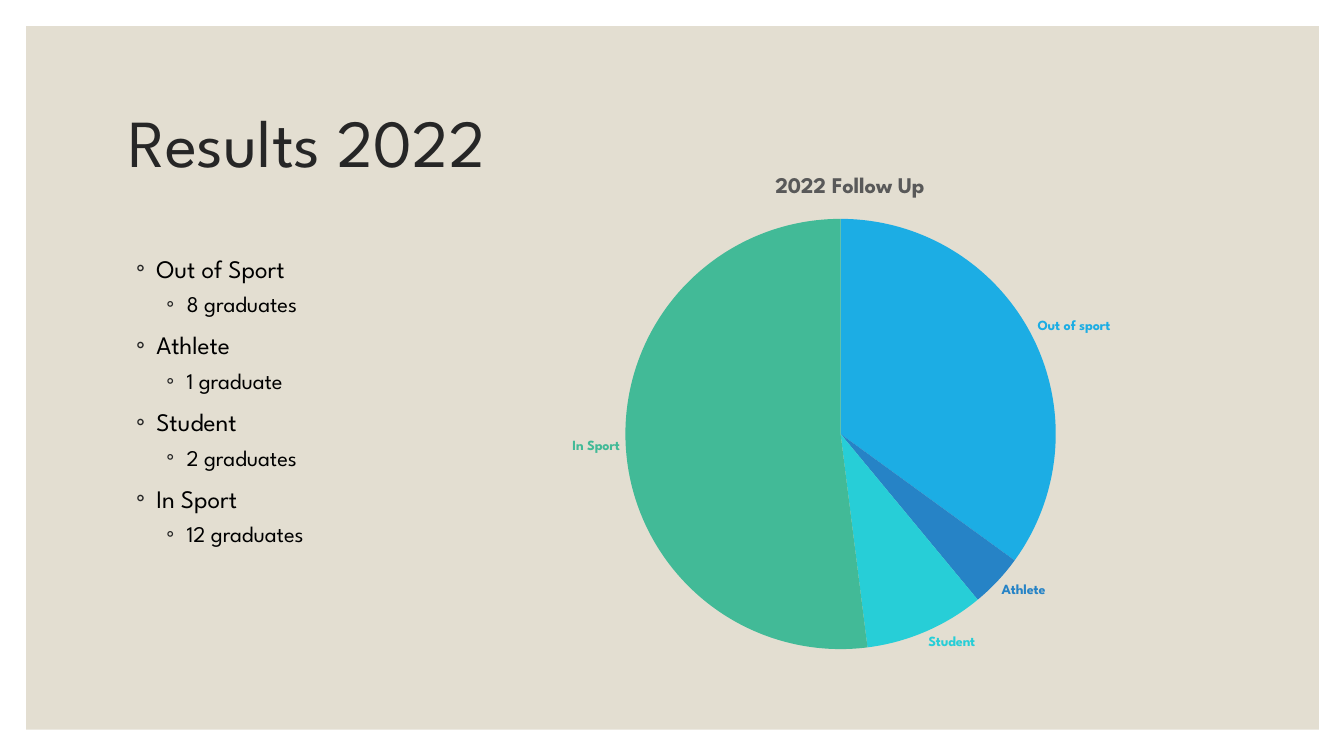
from lxml.etree import SubElement
from pptx import Presentation
from pptx.chart.data import CategoryChartData
from pptx.dml.color import RGBColor
from pptx.enum.chart import XL_CHART_TYPE, XL_LABEL_POSITION
from pptx.enum.shapes import MSO_SHAPE
from pptx.enum.text import MSO_ANCHOR, MSO_AUTO_SIZE, PP_ALIGN
from pptx.oxml.ns import qn
from pptx.util import Pt

FONT = "League Spartan"


def px(n):
    return n * 9144


def style(font, color, **values):
    font.color.rgb = RGBColor.from_string(color)
    for name, value in {"name": FONT, **values}.items():
        setattr(font, name, value)


prs = Presentation()
prs.slide_width, prs.slide_height = px(1333), px(750)
s = prs.slides.add_slide(prs.slide_layouts[1])
title, body = s.placeholders

panel = s.shapes.add_shape(MSO_SHAPE.RECTANGLE, px(26), px(26), px(1282), px(698))
panel.shadow.inherit = False
panel.fill.solid()
panel.fill.fore_color.rgb = RGBColor.from_string("E3DED1")
panel.line.fill.background()
s.shapes._spTree.insert(2, panel._element)

for sp, box, anchor in [
    (title, (117, 70, 1100, 150), MSO_ANCHOR.MIDDLE),
    (body, (125, 246, 745, 387), MSO_ANCHOR.TOP),
]:
    sp.left, sp.top, sp.width, sp.height = map(px, box)
    sp.text_frame.vertical_anchor = anchor
    sp.text_frame.auto_size = MSO_AUTO_SIZE.NONE
    sp.text_frame.word_wrap = True

p = title.text_frame.paragraphs[0]
p.alignment = PP_ALIGN.LEFT
p.line_spacing = 0.9
r = p.add_run()
r.text = "Results 2022"
style(r.font, "262626", size=Pt(48))

results = [
    ("Out of Sport", "8 graduates"),
    ("Athlete", "1 graduate"),
    ("Student", "2 graduates"),
    ("In Sport", "12 graduates"),
]
levels = [(20, 9, 18), (50, 5, 16)]
tf = body.text_frame
p = tf.paragraphs[0]
for group in results:
    for level, (text, (indent, before, size)) in enumerate(zip(group, levels)):
        if p.runs:
            p = tf.add_paragraph()
        p.level = level
        p.space_before = Pt(before)
        r = p.add_run()
        r.text = text
        style(r.font, "000000", size=Pt(size))
        pPr = p._p.get_or_add_pPr()
        pPr.set("marL", str(px(indent)))
        pPr.set("indent", str(px(-20)))
        color = SubElement(pPr, qn("a:buClr"))
        SubElement(color, qn("a:srgbClr"), val="262626")
        SubElement(pPr, qn("a:buFont"), typeface="Calibri")
        SubElement(pPr, qn("a:buChar"), char="◦")

data = CategoryChartData()
data.categories = ["Out of sport", "Athlete", "Student", "In Sport"]
data.add_series("Series 1", (35, 4, 9, 52))
chart = s.shapes.add_chart(
    XL_CHART_TYPE.PIE, px(379), px(154), px(928), px(517), data
).chart
chart.has_legend = False
style(chart.font, "000000", size=Pt(10))
chart.has_title = True
r = chart.chart_title.text_frame.paragraphs[0].add_run()
r.text = "2022 Follow Up"
style(r.font, "595959", size=Pt(16), bold=True)

plot = chart.plots[0]
plot.vary_by_categories = True
for i, color in enumerate(["1CADE4", "2683C6", "27CED7", "42BA97"]):
    point = plot.series[0].points[i]
    point.format.fill.solid()
    point.format.fill.fore_color.rgb = RGBColor.from_string(color)
    point.format.line.fill.background()
    style(point.data_label.font, color, size=Pt(10), bold=True)
    point.data_label.position = XL_LABEL_POSITION.OUTSIDE_END
for label in plot._element.iter(qn("c:dLbl")):
    label.find(qn("c:showVal")).set("val", "0")
    label.find(qn("c:showCatName")).set("val", "1")

area = chart._chartSpace.chart.plotArea
layout = area.find(qn("c:layout"))
if layout is None:
    layout = SubElement(area, qn("c:layout"))
    area.insert(0, layout)
manual = SubElement(layout, qn("c:manualLayout"))
for tag, value in {
    "layoutTarget": "inner", "xMode": "edge", "yMode": "edge",
    "x": 0.26, "y": 0.12, "w": 0.46, "h": 0.83,
}.items():
    SubElement(manual, qn(f"c:{tag}"), val=str(value))

prs.save("out.pptx")
